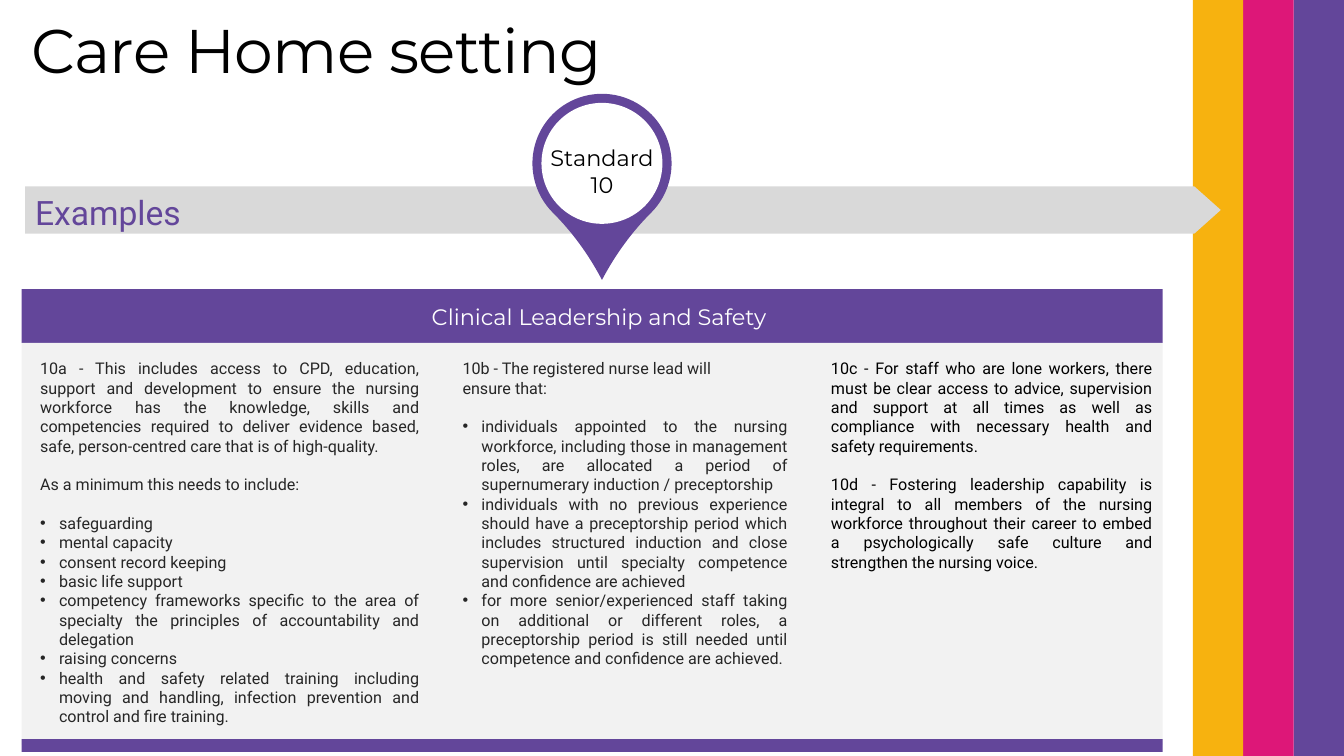
from lxml import etree
from pptx import Presentation
from pptx.dml.color import RGBColor
from pptx.enum.shapes import MSO_SHAPE
from pptx.enum.text import MSO_ANCHOR, PP_ALIGN
from pptx.oxml.ns import qn
from pptx.util import Pt

RECTANGLE, ELLIPSE = MSO_SHAPE.RECTANGLE, MSO_SHAPE.OVAL
ARROW, TEARDROP = MSO_SHAPE.RIGHT_ARROW, MSO_SHAPE.TEAR
LEFT, CENTER, JUSTIFY = PP_ALIGN.LEFT, PP_ALIGN.CENTER, PP_ALIGN.JUSTIFY
TOP, MIDDLE, BOTTOM = MSO_ANCHOR.TOP, MSO_ANCHOR.MIDDLE, MSO_ANCHOR.BOTTOM

PURPLE, PINK, YELLOW = "63469A", "DD1778", "F7B20F"
BLACK, WHITE, DARK, GREY, PALE = "000000", "FFFFFF", "262626", "D9D9D9", "F2F2F2"
HEADING_FONT, BODY_FONT = "Montserrat", "Roboto"
BODY_SIZE, BLANK_LINE, INDENT = 11.5, 13.8, 13.5

# Content: each column is (left, width, color, blocks); a gap separates blocks,
# and a list inside a block holds bullets
COLUMNS = [
    (21.6, 285, DARK, [
        ["10a - This includes access to CPD, education, support and development to "
         "ensure the nursing workforce has the knowledge, skills and competencies "
         "required to deliver evidence based, safe, person-centred care that is of "
         "high-quality."],
        ["As a minimum this needs to include:"],
        [["safeguarding",
          "mental capacity",
          "consent record keeping",
          "basic life support",
          "competency frameworks specific to the area of specialty the principles "
          "of accountability and delegation",
          "raising concerns",
          "health and safety related training including moving and handling, "
          "infection prevention and control and fire training."]],
    ]),
    (323.3, 246.3, DARK, [
        ["10b - The registered nurse lead will", "ensure that:"],
        [["individuals appointed to the nursing workforce, including those in "
          "management roles, are allocated a period of supernumerary induction / "
          "preceptorship",
          "individuals with no previous experience should have a preceptorship "
          "period which includes structured induction and close supervision until "
          "specialty competence and confidence are achieved",
          "for more senior/experienced staff taking on additional or different "
          "roles, a preceptorship period is still needed until competence and "
          "confidence are achieved."]],
    ]),
    (586.5, 243.7, BLACK, [
        ["10c - For staff who are lone workers, there must be clear access to "
         "advice, supervision and support at all times as well as compliance with "
         "necessary health and safety requirements."],
        ["10d - Fostering leadership capability is integral to all members of the "
         "nursing workforce throughout their career to embed a psychologically "
         "safe culture and strengthen the nursing voice."],
    ]),
]

presentation = Presentation()
presentation.slide_width, presentation.slide_height = Pt(960), Pt(540)
slide = presentation.slides.add_slide(presentation.slide_layouts[6])


def rgb(color):
    return RGBColor.from_string(color)


def add_shape(kind, left, top, width, height, color, adjustments=(), rotation=0):
    shape = slide.shapes.add_shape(kind, Pt(left), Pt(top), Pt(width), Pt(height))
    shape.shadow.inherit = False
    shape.fill.solid()
    shape.fill.fore_color.rgb = rgb(color)
    shape.line.fill.background()
    for index, value in enumerate(adjustments):
        shape.adjustments[index] = value
    shape.rotation = rotation


def add_bullet(paragraph):
    properties = paragraph._p.get_or_add_pPr()
    properties.set("marL", str(Pt(INDENT)))
    properties.set("indent", str(-Pt(INDENT)))
    etree.SubElement(properties, qn("a:buFont")).set("typeface", "Arial")
    etree.SubElement(properties, qn("a:buChar")).set("char", "•")


def add_text(lines, left, top, width, height, size=16, font=HEADING_FONT, color=BLACK,
             align=LEFT, anchor=TOP, line_spacing=None, tracking=0, side_margin=7.2):
    """Lines are strings or (text, space before, is bullet) tuples."""
    box = slide.shapes.add_textbox(Pt(left), Pt(top), Pt(width), Pt(height))
    frame = box.text_frame
    frame.word_wrap = True
    frame.vertical_anchor = anchor
    frame.margin_left = frame.margin_right = Pt(side_margin)
    for index, line in enumerate(lines):
        text, space, bullet = (line, 0, False) if isinstance(line, str) else line
        paragraph = frame.add_paragraph() if index else frame.paragraphs[0]
        paragraph.alignment = align
        paragraph.space_before = Pt(space)
        if line_spacing:
            paragraph.line_spacing = line_spacing
        if bullet:
            add_bullet(paragraph)
        run = paragraph.add_run()
        run.text = text
        run.font.size, run.font.name = Pt(size), font
        run.font.color.rgb = rgb(color)
        if tracking:
            run.font._element.set("spc", str(round(tracking * 100)))


def flatten(blocks):
    lines = []
    for block in blocks:
        space = BLANK_LINE if lines else 0
        for item in block:
            bullet = isinstance(item, list)
            for text in item if bullet else [item]:
                lines.append((text, space, bullet))
                space = 0
    return lines


# Vertical bands at the right edge
BAND_WIDTH = 36
for index, color in enumerate((PURPLE, PINK, YELLOW), start=1):
    add_shape(RECTANGLE, 960 - index * BAND_WIDTH, 0, BAND_WIDTH, 540, color)

# Arrow and location pin
add_shape(ARROW, 18, 133.2, 854, 33.6, GREY, adjustments=(1, 0.56))
PIN_X, PIN_Y = 430, 116.7
for kind, diameter, color, adjustments, rotation in (
        (TEARDROP, 99.4, PURPLE, (1.184,), 135), (ELLIPSE, 86.4, WHITE, (), 0)):
    add_shape(kind, PIN_X - diameter / 2, PIN_Y - diameter / 2, diameter, diameter,
              color, adjustments, rotation)
add_text(["Standard", "10"], PIN_X - 45, 99.4, 90, 46, align=CENTER, anchor=MIDDLE,
         side_margin=0)

# Panel with header and footer bars
PANEL_LEFT, PANEL_WIDTH = 15.5, 815
for top, height, color in ((206.6, 38.4, PURPLE), (245, 287, PALE), (528, 9, PURPLE)):
    add_shape(RECTANGLE, PANEL_LEFT, top, PANEL_WIDTH, height, color)
add_text(["Clinical Leadership and Safety"], 50, 213.1, 756, 26.6, color=WHITE,
         align=CENTER)

# Title, columns and arrow label
add_text(["Care Home setting"], 15.1, 1.4, 763, 64, size=44, anchor=BOTTOM,
         line_spacing=0.9, tracking=-0.5)
for left, width, color, blocks in COLUMNS:
    add_text(flatten(blocks), left, 252.7, width, 272, size=BODY_SIZE, font=BODY_FONT,
             color=color, align=JUSTIFY)
add_text(["Examples"], 18, 133.2, 127, 36, size=24, font=BODY_FONT, color=PURPLE)

presentation.save("out.pptx")
